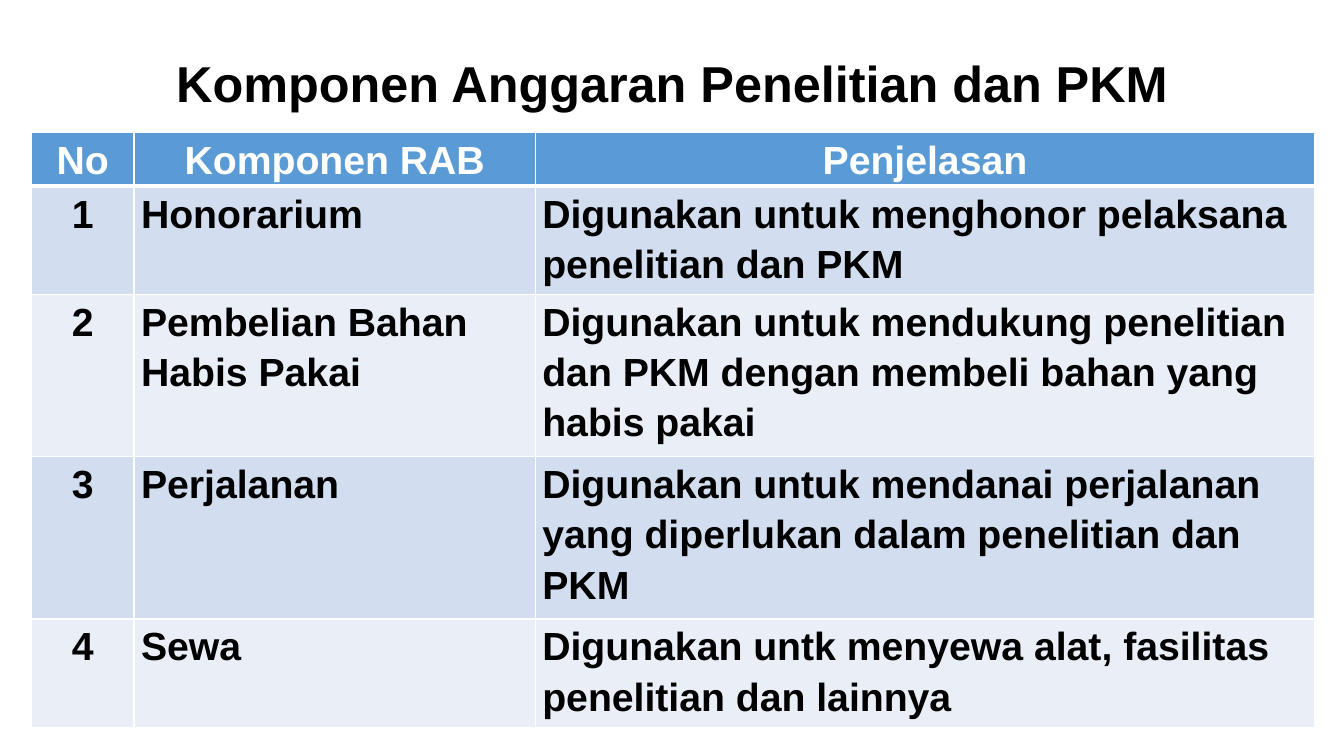
from lxml import etree
from pptx import Presentation
from pptx.dml.color import RGBColor
from pptx.enum.text import MSO_ANCHOR, PP_ALIGN
from pptx.oxml.ns import qn
from pptx.util import Inches, Pt

CENTER, LEFT = PP_ALIGN.CENTER, PP_ALIGN.LEFT
MIDDLE, TOP = MSO_ANCHOR.MIDDLE, MSO_ANCHOR.TOP

COLUMN_WIDTHS = [1.02, 3.98, 7.73]
ROW_HEIGHTS = [0.51, 1.06, 1.6, 1.6, 1.06]
HEADER = ["No", "Komponen RAB", "Penjelasan"]
COMPONENTS = [
    ("Honorarium", "Digunakan untuk menghonor pelaksana penelitian dan PKM"),
    ("Pembelian Bahan Habis Pakai",
     "Digunakan untuk mendukung penelitian dan PKM dengan membeli bahan yang habis pakai"),
    ("Perjalanan",
     "Digunakan untuk mendanai perjalanan yang diperlukan dalam penelitian dan PKM"),
    ("Sewa", "Digunakan untk menyewa alat, fasilitas penelitian dan lainnya"),
]


def rgb(value):
    return RGBColor.from_string(value)


class SlideBuilder:
    font = "Arial"
    black, white = "000000", "FFFFFF"
    header_fill = "5B9BD5"
    band_fills = ["D2DEEF", "EAEFF7"]

    def __init__(self, slide):
        self.slide = slide

    def set_text(self, tf, text, size, color, align, spacing):
        p = tf.paragraphs[0]
        p.text = text
        p.alignment = align
        p.line_spacing = spacing
        p.font.name = self.font
        p.font.size = Pt(size)
        p.font.bold = True
        p.font.color.rgb = rgb(color)

    def title(self, text, left, top, width, height):
        sp = self.slide.shapes.add_textbox(*map(Inches, (left, top, width, height)))
        tf = sp.text_frame
        tf.word_wrap = True
        tf.vertical_anchor = MIDDLE
        self.set_text(tf, text, 36, self.black, CENTER, 0.9)

    def border(self, cell, side, width):
        tc_pr = cell._tc.get_or_add_tcPr()
        ln = etree.SubElement(tc_pr, qn(f"a:{side}"), w=str(Pt(width)))
        fill = etree.SubElement(ln, qn("a:solidFill"))
        etree.SubElement(fill, qn("a:srgbClr"), val=self.white)

    def cell(self, cell, text, row, column):
        is_header = row == 0
        cell.margin_left = cell.margin_right = Inches(0.07)
        cell.margin_top = cell.margin_bottom = 0
        cell.vertical_anchor = TOP
        for side in ("lnL", "lnR", "lnT", "lnB"):
            under_header = (row, side) in ((0, "lnB"), (1, "lnT"))
            self.border(cell, side, 3 if under_header else 1)
        cell.fill.solid()
        fill = self.header_fill if is_header else self.band_fills[(row - 1) % 2]
        cell.fill.fore_color.rgb = rgb(fill)
        color = self.white if is_header else self.black
        align = CENTER if is_header or column == 0 else LEFT
        self.set_text(cell.text_frame, text, 28, color, align, 1.15)

    def table(self, rows, left, top, widths, heights):
        size = (sum(widths), sum(heights))
        frame = self.slide.shapes.add_table(
            len(rows), len(widths), *map(Inches, (left, top, *size)))
        table = frame.table
        for column, width in zip(table.columns, widths):
            column.width = Inches(width)
        for row, height in zip(table.rows, heights):
            row.height = Inches(height)
        for i, texts in enumerate(rows):
            for j, text in enumerate(texts):
                self.cell(table.cell(i, j), text, i, j)


def main():
    prs = Presentation()
    prs.slide_width, prs.slide_height = Inches(13.33), Inches(7.5)
    s = SlideBuilder(prs.slides.add_slide(prs.slide_layouts[6]))
    s.title("Komponen Anggaran Penelitian dan PKM", 0.92, 0.4, 11.5, 0.91)
    rows = [HEADER] + [(str(n), *item) for n, item in enumerate(COMPONENTS, 1)]
    s.table(rows, 0.31, 1.31, COLUMN_WIDTHS, ROW_HEIGHTS)
    prs.save("out.pptx")


if __name__ == "__main__":
    main()
